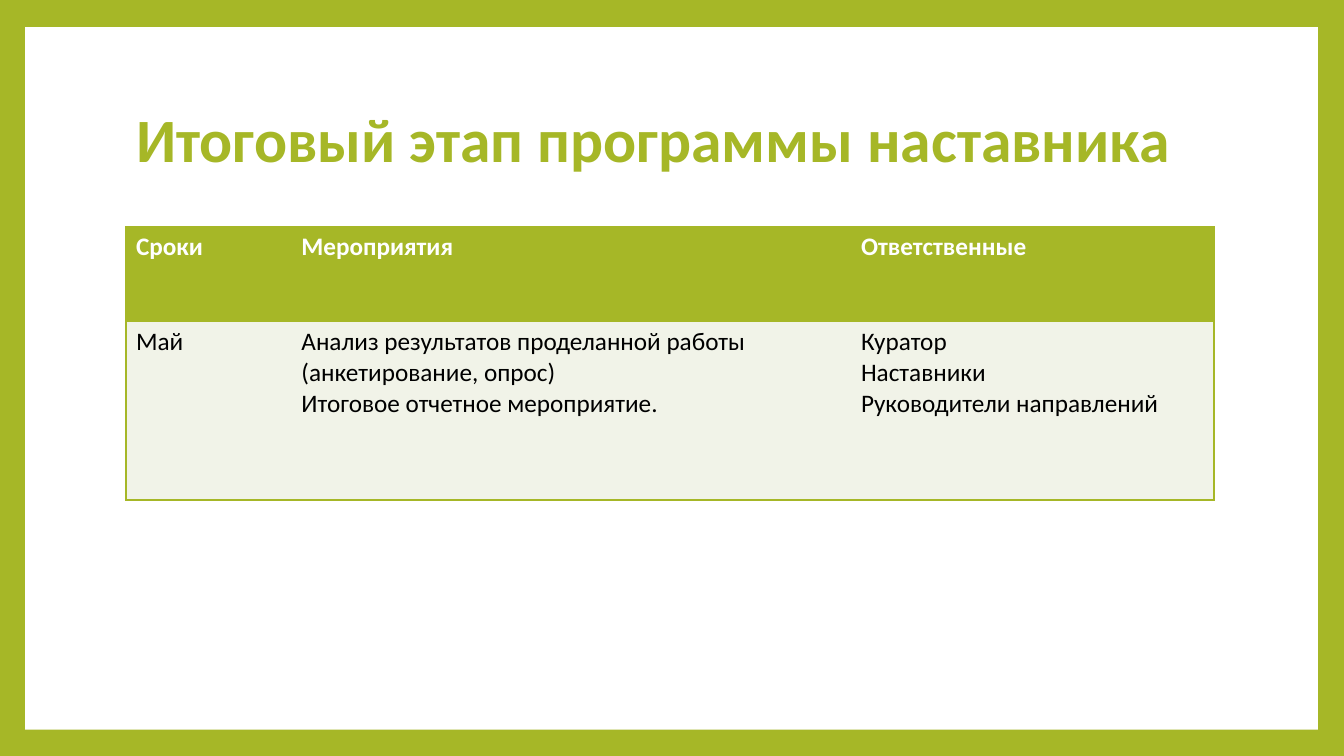
from lxml.etree import SubElement
from pptx import Presentation
from pptx.dml.color import RGBColor
from pptx.enum.shapes import MSO_SHAPE
from pptx.enum.text import MSO_ANCHOR, MSO_AUTO_SIZE, PP_ALIGN
from pptx.oxml.ns import qn
from pptx.util import Inches, Pt

GREEN = RGBColor(0xA6, 0xB7, 0x27)
PALE = RGBColor(0xF1, 0xF3, 0xE8)
WHITE = RGBColor(0xFF, 0xFF, 0xFF)
BLACK = RGBColor(0x00, 0x00, 0x00)

COLUMN_WIDTHS = [1.64, 5.55, 3.6]
ROW_HEIGHTS = [0.94, 1.77]
ROWS = [
    [["Сроки"], ["Мероприятия"], ["Ответственные"]],
    [
        ["Май"],
        ["Анализ результатов проделанной работы (анкетирование, опрос)",
         "Итоговое отчетное мероприятие."],
        ["Куратор", "Наставники", "Руководители направлений"],
    ],
]


def write_text(frame, lines, size=18, color=BLACK, bold=False, spacing=1.0):
    for index, line in enumerate(lines):
        para = frame.paragraphs[0] if index == 0 else frame.add_paragraph()
        para.alignment = PP_ALIGN.LEFT
        para.line_spacing = spacing
        span = para.add_run()
        span.text = line
        span.font.name = "Calibri"
        span.font.size = Pt(size)
        span.font.bold = bold
        span.font.color.rgb = color


def draw_borders(cell, sides):
    """Draw green lines on the given sides, in the order L, R, T, B."""
    properties = cell._tc.get_or_add_tcPr()
    for side in "LRTB":
        line = SubElement(properties, qn(f"a:ln{side}"), w=str(Pt(1)))
        if side in sides:
            fill = SubElement(line, qn("a:solidFill"))
            SubElement(fill, qn("a:srgbClr"), val=str(GREEN))
        else:
            SubElement(line, qn("a:noFill"))


class SlideBuilder:
    def __init__(self, page):
        self.page = page
        background = page.background.fill
        background.solid()
        background.fore_color.rgb = GREEN

    def add_title(self, text, left, top, width, height):
        title = self.page.shapes.title
        title.left, title.top = Inches(left), Inches(top)
        title.width, title.height = Inches(width), Inches(height)
        frame = title.text_frame
        frame.word_wrap = True
        frame.auto_size = MSO_AUTO_SIZE.NONE
        frame.vertical_anchor = MSO_ANCHOR.MIDDLE
        write_text(frame, [text], size=44, color=GREEN, bold=True, spacing=0.9)

    def add_panel(self, left, top, width, height):
        """Add the white sheet behind the title."""
        panel = self.page.shapes.add_shape(
            MSO_SHAPE.RECTANGLE, Inches(left), Inches(top), Inches(width), Inches(height))
        panel.shadow.inherit = False
        panel.fill.solid()
        panel.fill.fore_color.rgb = WHITE
        panel.line.fill.background()
        self.page.shapes.title.element.addprevious(panel.element)

    def add_table(self, rows, left, top, widths, heights):
        table = self.page.shapes.add_table(
            len(rows), len(widths), Inches(left), Inches(top),
            Inches(sum(widths)), Inches(sum(heights))).table
        for column, width in zip(table.columns, widths):
            column.width = Inches(width)
        for row, height in zip(table.rows, heights):
            row.height = Inches(height)
        for row_index, row in enumerate(rows):
            header = row_index == 0
            for column_index, lines in enumerate(row):
                cell = table.cell(row_index, column_index)
                sides = "TB"
                if column_index == 0:
                    sides += "L"
                if column_index == len(widths) - 1:
                    sides += "R"
                draw_borders(cell, sides)
                cell.fill.solid()
                cell.fill.fore_color.rgb = GREEN if header else PALE
                write_text(cell.text_frame, lines,
                           color=WHITE if header else BLACK, bold=header)


def main():
    deck = Presentation()
    deck.slide_width, deck.slide_height = Inches(13.33), Inches(7.5)
    builder = SlideBuilder(deck.slides.add_slide(deck.slide_layouts[5]))
    builder.add_panel(0.25, 0.27, 12.82, 6.97)
    builder.add_title("Итоговый этап программы наставника", 1.25, 0.67, 10.8, 1.48)
    builder.add_table(ROWS, 1.25, 2.25, COLUMN_WIDTHS, ROW_HEIGHTS)
    deck.save("out.pptx")


if __name__ == "__main__":
    main()
